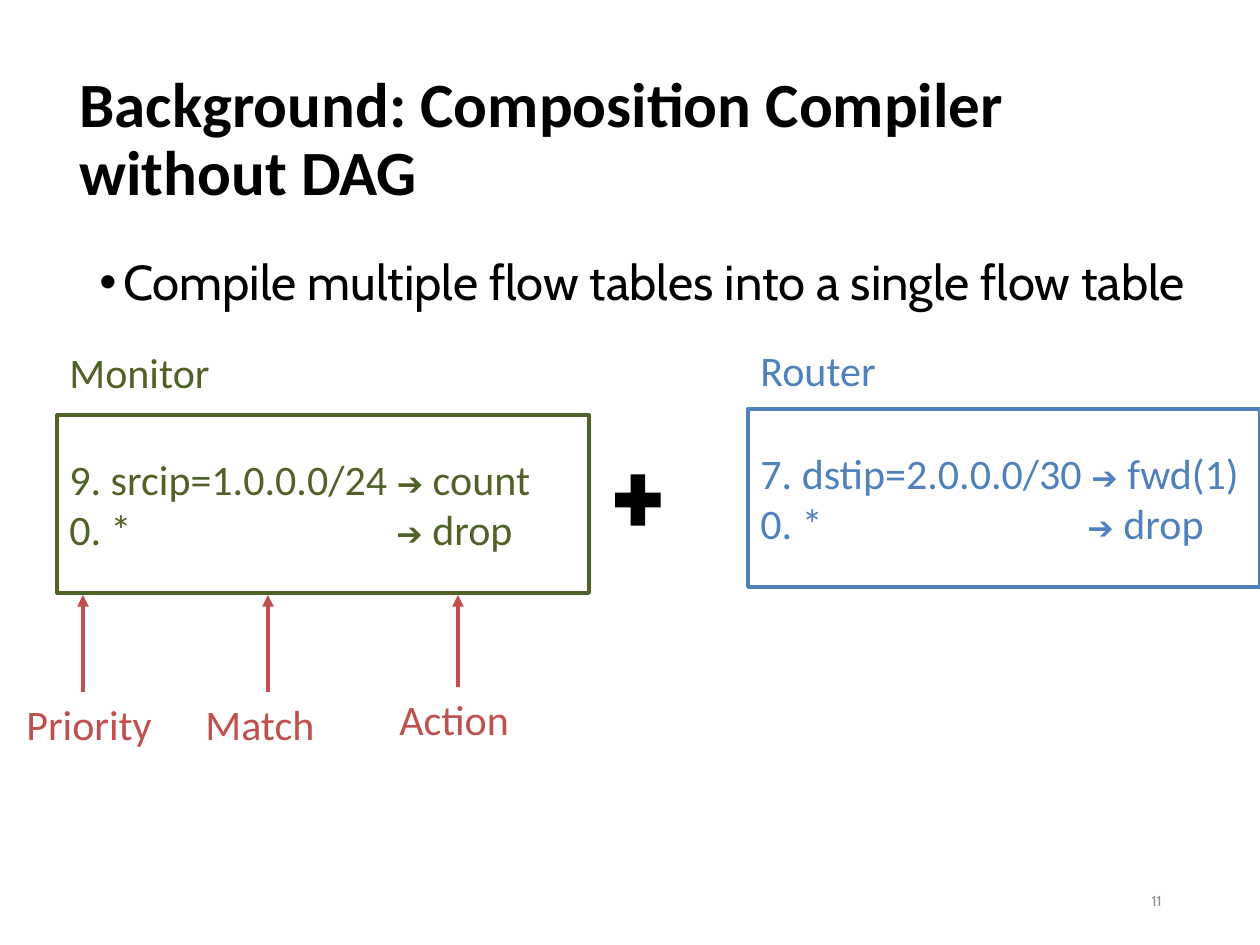
from lxml.etree import SubElement
from pptx import Presentation
from pptx.dml.color import RGBColor
from pptx.enum.shapes import MSO_CONNECTOR, MSO_SHAPE
from pptx.enum.text import MSO_ANCHOR, MSO_AUTO_SIZE, PP_ALIGN
from pptx.oxml.ns import qn
from pptx.util import Emu, Pt

SCALE = 914400 / 126
BLACK, GREEN, BLUE, RED, GRAY = "000000", "4F6228", "4F81BD", "C0504D", "8C8C8C"


def color(value):
    return RGBColor.from_string(value)


def write(paragraph, text, size, family, tint, bold=False):
    run = paragraph.add_run()
    run.text = text
    look = {"size": Pt(size), "name": family, "bold": bold}
    for key, value in look.items():
        setattr(run.font, key, value)
    run.font.color.rgb = color(tint)


deck = Presentation()
deck.slide_width, deck.slide_height = [Emu(round(n * SCALE)) for n in (1260, 945)]
slide = deck.slides.add_slide(deck.slide_layouts[5])

title = slide.shapes.title
frame = {"left": 67, "top": 50, "width": 1086, "height": 183}
for key, value in frame.items():
    setattr(title, key, Emu(round(value * SCALE)))
layout = {"vertical_anchor": MSO_ANCHOR.MIDDLE, "word_wrap": True, "auto_size": MSO_AUTO_SIZE.NONE}
for key, value in layout.items():
    setattr(title.text_frame, key, value)
heading = title.text_frame.paragraphs[0]
heading.alignment, heading.line_spacing = PP_ALIGN.LEFT, 0.9
write(heading, "Background: Composition Compiler without DAG", 36, "Calibri", BLACK, True)

summary = slide.shapes.add_textbox(*[Emu(round(n * SCALE)) for n in (87, 252, 1173, 600)])
summary.text_frame.word_wrap = True
point = summary.text_frame.paragraphs[0]
point.line_spacing = 0.9
indent = {"marL": 24, "indent": -24}
properties = point._p.get_or_add_pPr()
for key, value in indent.items():
    properties.set(key, str(round(value * SCALE)))
SubElement(properties, qn("a:buFont")).set("typeface", "Arial")
SubElement(properties, qn("a:buChar")).set("char", "•")
write(point, "Compile multiple flow tables into a single flow table", 28, "Cabin", BLACK)

page = slide.shapes.add_textbox(*[Emu(round(n * SCALE)) for n in (891, 876, 283, 50)])
page.text_frame.word_wrap = True
page.text_frame.vertical_anchor = MSO_ANCHOR.MIDDLE
number = page.text_frame.paragraphs[0]
number.alignment = PP_ALIGN.RIGHT
write(number, "11", 8.2, "Cabin", GRAY)

plus = slide.shapes.add_shape(
    MSO_SHAPE.MATH_PLUS, *[Emu(round(n * SCALE)) for n in (607, 465, 62, 70)])
plus.shadow.inherit = False
plus.fill.solid()
plus.fill.fore_color.rgb = color(BLACK)
plus.line.fill.background()

flow_tables = [
    (57, 415, 532, GREEN, "9. srcip=1.0.0.0/24 ", " count"),
    (748, 409, 512, BLUE, "7. dstip=2.0.0.0/30 ", " fwd(1)"),
]
for left, top, width, tint, match, action in flow_tables:
    table = slide.shapes.add_shape(
        MSO_SHAPE.RECTANGLE, *[Emu(round(n * SCALE)) for n in (left, top, width, 178)])
    table.shadow.inherit = False
    table.fill.solid()
    table.fill.fore_color.rgb = color("FFFFFF")
    table.line.color.rgb = color(tint)
    table.line.width = Pt(2.25)
    table.text_frame.word_wrap = True
    table.text_frame.vertical_anchor = MSO_ANCHOR.MIDDLE
    rules = [table.text_frame.paragraphs[0], table.text_frame.add_paragraph()]
    for rule, condition, result in zip(rules, (match, "0. *\t"), (action, " drop")):
        tabs = SubElement(rule._p.get_or_add_pPr(), qn("a:tabLst"))
        stop = {"pos": str(round(327 * SCALE)), "algn": "l"}
        SubElement(tabs, qn("a:tab"), stop)
        rule.alignment = PP_ALIGN.LEFT
        write(rule, condition, 24, "Calibri", tint)
        write(rule, "➔", 18, "Arial", tint)
        write(rule, result, 24, "Calibri", tint)

labels = [
    ("Monitor", 57, 340, 247, GREEN),
    ("Router", 748, 338, 247, BLUE),
    ("Priority", 14, 692, 151, RED),
    ("Match", 193, 692, 151, RED),
    ("Action", 387, 687, 151, RED),
]
for text, left, top, width, tint in labels:
    label = slide.shapes.add_textbox(*[Emu(round(n * SCALE)) for n in (left, top, width, 63)])
    label.text_frame.word_wrap = True
    label.text_frame.auto_size = MSO_AUTO_SIZE.SHAPE_TO_FIT_TEXT
    write(label.text_frame.paragraphs[0], text, 24, "Calibri", tint)

for x, bottom in ((83, 692), (268, 692), (458, 687)):
    pointer = slide.shapes.add_connector(
        MSO_CONNECTOR.STRAIGHT, *[Emu(round(n * SCALE)) for n in (x, bottom, x, 595)])
    pointer.line.color.rgb = color(RED)
    pointer.line.width = Pt(2.25)
    SubElement(pointer.line._get_or_add_ln(), qn("a:tailEnd")).set("type", "triangle")
    SubElement(pointer._element.spPr, qn("a:effectLst"))

deck.save("out.pptx")
